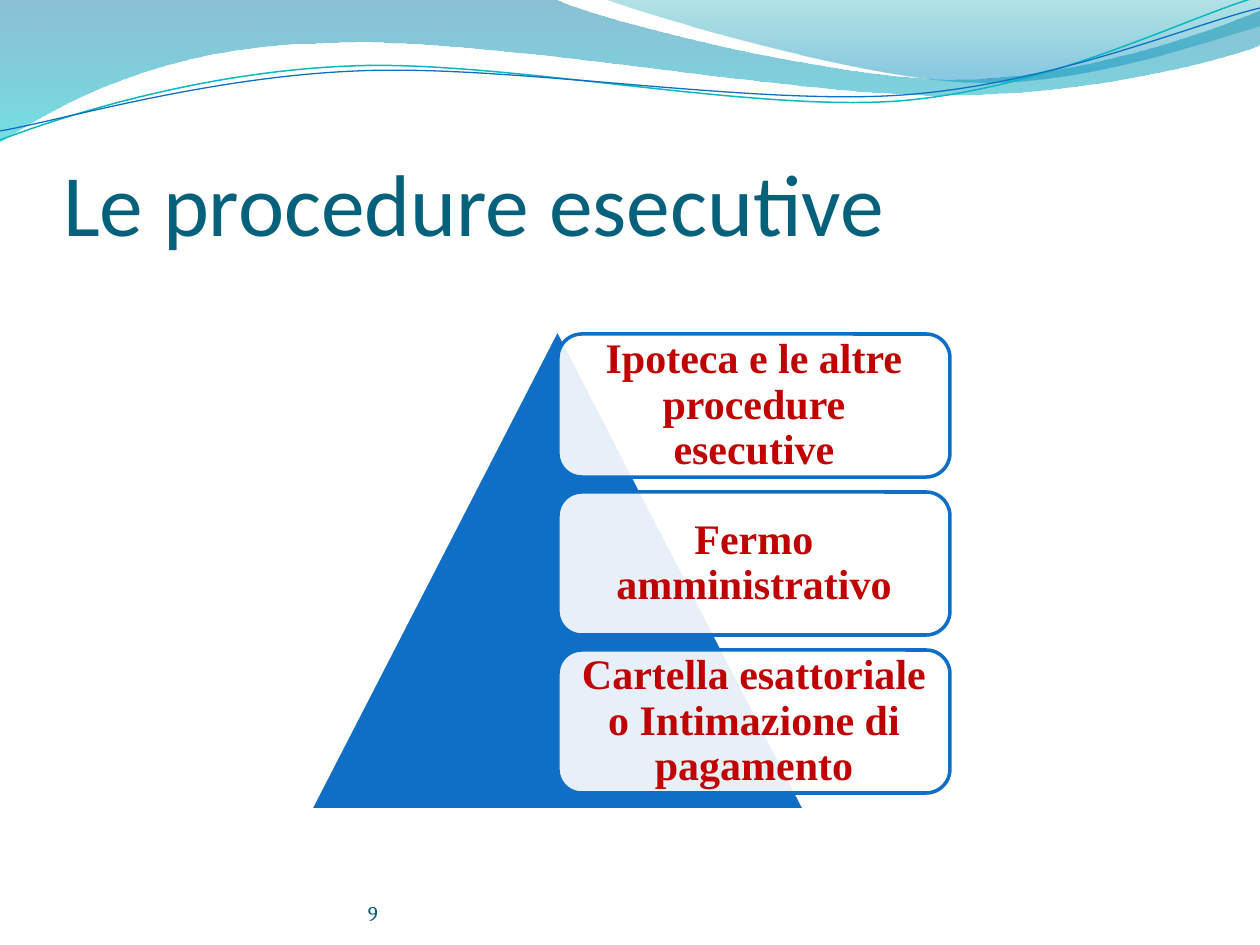
from pptx import Presentation
from pptx.dml.color import RGBColor
from pptx.enum.shapes import MSO_SHAPE as Preset
from pptx.enum.text import MSO_ANCHOR as Anchor, MSO_AUTO_SIZE as AutoSize, PP_ALIGN as Align
from pptx.oxml.ns import qn
from pptx.util import Pt
from lxml.etree import SubElement

EMU_PER_PX = 914400 / 126
COLORS = {
    "blue": "0F6FC6",
    "teal": "0AB8BF",
    "wave_blue": "0074A1",
    "wave_cyan": "00C6CF",
    "crest_teal": "00A1A9",
    "crest_blue": "008BBF",
    "title": "04617B",
    "number": "045D75",
    "step": "C00000",
    "white": "FFFFFF",
}
WAVE = [(0, 0), (554, -1),
        (600, 21, 837, 79, 955, 79), (1075, 79, 1207, 33, 1260, 11),
        (1261, 45),
        (1239, 55, 1096, 96, 940, 95), (784, 95, 481, 35, 324, 43),
        (163, 45, 58, 105, -1, 142)]
CREST = [(604, -1), (641, 14, 859, 78, 969, 82),
         (1079, 87, 1211, 40, 1260, 26), (1260, 0)]
TEAL_STRAND = [(0, 140), (60, 117, 199, 72, 349, 66),
               (498, 59, 747, 112, 898, 101), (1049, 89, 1182, 19, 1257, -3)]
BLUE_STRAND = [(0, 131), (59, 121, 207, 77, 357, 71),
               (508, 64, 752, 106, 903, 95), (1053, 84, 1187, 26, 1260, 8)]
STEPS = [
    "Ipoteca e le altre procedure esecutive",
    "Fermo amministrativo",
    "Cartella esattoriale o Intimazione di pagamento",
]


def px(value):
    return round(value * EMU_PER_PX)


def color(name):
    return RGBColor.from_string(COLORS[name])


def set_alpha(color_element, percent):
    SubElement(color_element, qn("a:alpha"), val=str(percent * 1000))


def bend(outline, segments):
    corners = iter(list(outline._element.iter(qn("a:lnTo"))))
    for segment in segments:
        corner = next(corners)
        if len(segment) == 6:
            corner.tag = qn("a:cubicBezTo")
            for _ in range(2):
                following = next(corners)
                corner.append(following[0])
                following.getparent().remove(following)


def add_outline(slide, segments, close):
    start, *rest = segments
    points = [(px(x), px(y)) for segment in rest
              for x, y in zip(segment[::2], segment[1::2])]
    builder = slide.shapes.build_freeform(*map(px, start))
    builder.add_line_segments(points, close=close)
    outline = builder.convert_to_shape()
    outline.shadow.inherit = False
    bend(outline, rest)
    return outline


def add_wave(slide, segments, stops):
    wave = add_outline(slide, segments, True)
    wave.line.fill.background()
    wave.fill.gradient()
    wave.fill.gradient_angle = 270
    for stop, (position, name, _) in zip(wave.fill.gradient_stops, stops):
        stop.position = position
        stop.color.rgb = color(name)
    for stop_color, (_, _, alpha) in zip(wave._element.spPr.iter(qn("a:srgbClr")), stops):
        set_alpha(stop_color, alpha)


def add_strand(slide, segments, name, width):
    strand = add_outline(slide, segments, False)
    strand.fill.background()
    strand.line.color.rgb = color(name)
    strand.line.width = Pt(width)


def write(frame, text, font_name, size, name, anchor, margins, align=Align.LEFT):
    frame.word_wrap = True
    frame.auto_size = AutoSize.NONE
    frame.vertical_anchor = anchor
    (frame.margin_left, frame.margin_top,
     frame.margin_right, frame.margin_bottom) = map(px, margins)
    paragraph = frame.paragraphs[0]
    paragraph.text = text
    paragraph.alignment = align
    paragraph.font.name = font_name
    paragraph.font.size = Pt(size)
    paragraph.font.color.rgb = color(name)
    return paragraph


def add_block(slide, preset, box, fill, line):
    block = slide.shapes.add_shape(preset, *map(px, box))
    block.shadow.inherit = False
    block.fill.solid()
    block.fill.fore_color.rgb = color(fill)
    block.line.color.rgb = color(line)
    block.line.width = Pt(2)
    return block


def add_step(slide, index, text):
    step = add_block(slide, Preset.ROUNDED_RECTANGLE,
                     (558, 334 + 158 * index, 392, 143), "white", "blue")
    set_alpha(step._element.spPr.find(qn("a:solidFill"))[0], 90)
    paragraph = write(step.text_frame, text, "Times New Roman", 24, "step",
                      Anchor.MIDDLE, (13, 13, 13, 13), Align.CENTER)
    paragraph.font.bold = True
    paragraph.line_spacing = 0.9


def add_title(slide, text):
    title = slide.shapes.title
    title.left, title.top, title.width, title.height = map(px, (63, 97, 1134, 157))
    write(title.text_frame, text, "Calibri", 50, "title", Anchor.BOTTOM, (0, 6, 0, 0))


def add_page_number(slide, number):
    page = slide.shapes.add_textbox(*map(px, (368, 876, 462, 50)))
    write(page.text_frame, number, "Cambria", 12, "number", Anchor.BOTTOM, (0, 0, 0, 0))


def main():
    deck = Presentation()
    deck.slide_width, deck.slide_height = px(1260), px(945)
    slide = deck.slides.add_slide(deck.slide_layouts[5])
    add_wave(slide, WAVE, [(0, "wave_blue", 45), (1, "wave_cyan", 55)])
    add_wave(slide, CREST, [(0, "crest_teal", 30), (0.8, "crest_blue", 45)])
    add_strand(slide, TEAL_STRAND, "teal", 0.85)
    add_strand(slide, BLUE_STRAND, "blue", 0.75)
    add_title(slide, "Le procedure esecutive")
    add_page_number(slide, "9")
    add_block(slide, Preset.ISOSCELES_TRIANGLE, (310, 329, 495, 481), "blue", "white")
    for index, text in enumerate(STEPS):
        add_step(slide, index, text)
    deck.save("out.pptx")


if __name__ == "__main__":
    main()
